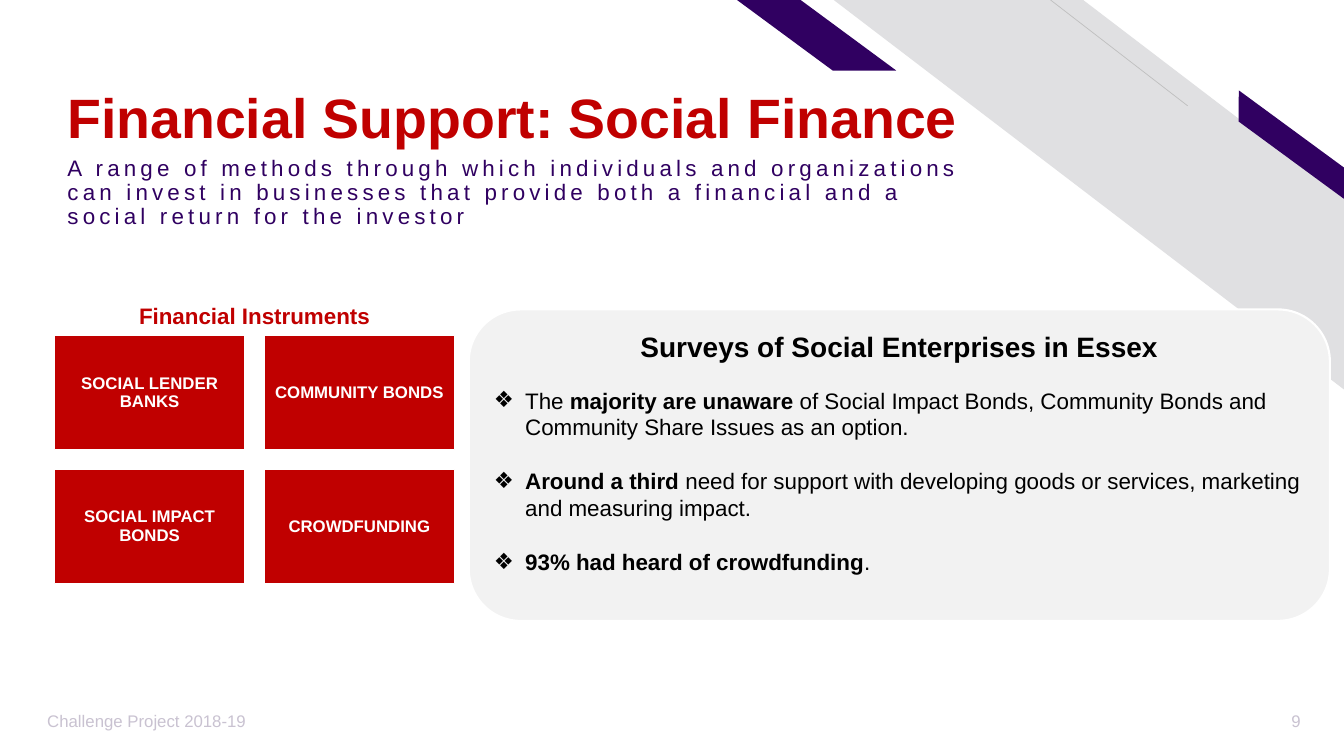
from lxml.etree import SubElement
from pptx import Presentation
from pptx.dml.color import RGBColor
from pptx.enum.shapes import MSO_CONNECTOR, MSO_SHAPE
from pptx.enum.text import MSO_ANCHOR, PP_ALIGN
from pptx.oxml.ns import qn
from pptx.util import Inches, Pt

WIDE, HIGH = Inches(13.33), Inches(7.5)
RED, PLUM, GREY, PALE = "C00000", "300061", "E0E0E2", "F2F2F2"
WHITE, BLACK, MUTED, RULE = "FFFFFF", "000000", "C9C2D1", "BFBFBF"
LEFT, MID, RIGHT = PP_ALIGN.LEFT, PP_ALIGN.CENTER, PP_ALIGN.RIGHT
TILES = ["SOCIAL LENDER BANKS", "COMMUNITY BONDS", "SOCIAL IMPACT BONDS", "CROWDFUNDING"]
POINTS = [
    [("The ", False), ("majority are unaware ", True),
     ("of Social Impact Bonds, Community Bonds and Community Share Issues as an option.", False)],
    [("Around a third ", True),
     ("need for support with developing goods or services, marketing and measuring impact.", False)],
    [("93% had heard of crowdfunding", True), (".", False)],
]


def color(code):
    """Turn a hex string into a colour."""
    return RGBColor.from_string(code)


def part(box, x, y, w, h):
    """Return the box at the given percentages of another box."""
    left, top, wide, high = box
    return left + wide * x / 100, top + high * y / 100, wide * w / 100, high * h / 100


def units(box):
    """Round a box to whole length units."""
    return [round(side) for side in box]


def block(slide, kind, box, fill, edge=None, width=1):
    """Draw a filled preset shape without shadow."""
    shape = slide.shapes.add_shape(kind, *units(box))
    shape.shadow.inherit = False
    shape.fill.solid()
    shape.fill.fore_color.rgb = color(fill)
    if edge:
        shape.line.color.rgb = color(edge)
        shape.line.width = Pt(width)
    else:
        shape.line.fill.background()
    return shape


def write(para, text, size, ink, bold=False, track=0):
    """Add one run to a paragraph."""
    run = para.add_run()
    run.text = text
    run.font.name = "Arial"
    run.font.size = Pt(size)
    run.font.bold = bold
    run.font.color.rgb = color(ink)
    if track:
        run.font._element.set("spc", str(track * 100))


def label(slide, box, text, size, ink, bold=False, align=LEFT,
          anchor=MSO_ANCHOR.TOP, lead=1.0, track=0):
    """Place a wrapped text box with one paragraph."""
    frame = slide.shapes.add_textbox(*units(box)).text_frame
    frame.word_wrap = True
    frame.vertical_anchor = anchor
    para = frame.paragraphs[0]
    para.alignment = align
    para.line_spacing = lead
    write(para, text, size, ink, bold, track)
    return frame


def decor(slide, box):
    """Draw the diagonal bands of the top right corner."""
    bands = [
        (MSO_SHAPE.DIAGONAL_STRIPE, (15.94, 0, 84.2, 100), 0.512, 0, GREY),
        (MSO_SHAPE.PARALLELOGRAM, (79.07, 33.85, 24.58, 6.46), 0.72, 36.3, PLUM),
        (MSO_SHAPE.PARALLELOGRAM, (0, 0, 26.24, 18.09), 1.356, 0, PLUM),
    ]
    for kind, share, skew, turn, fill in bands:
        band = block(slide, kind, part(box, *share), fill)
        band.adjustments[0] = skew
        band.rotation = turn
        band._element.spPr.find(qn("a:xfrm")).set("flipH", "1")
    x, y, w, h = units(part(box, 51.66, 0, 22.58, 27.13))
    line = slide.shapes.add_connector(MSO_CONNECTOR.STRAIGHT, x + w, y + h, x, y)
    line.line.color.rgb = color(RULE)
    line.line.width = Pt(0.5)
    SubElement(line._element.spPr, qn("a:effectLst"))


def header(slide, box):
    """Write the title and the line below it."""
    title = label(slide, part(box, 0, 0, 98.6, 57.8), "Financial Support: Social Finance",
                  39.6, RED, True, anchor=MSO_ANCHOR.BOTTOM, lead=0.9)
    title.margin_bottom = 0
    label(slide, part(box, 0, 58.7, 100, 41.3),
          "A range of methods through which individuals and organizations can invest in "
          "businesses that provide both a financial and a social return for the investor",
          16, PLUM, lead=0.9, track=3)


def tools(slide, box):
    """Draw the heading and the two by two grid of instruments."""
    label(slide, part(box, 15.4, 0, 69.2, 13), "Financial Instruments", 16, RED, True, MID)
    grid = part(box, 0, 13.4, 100, 86.6)
    for spot, text in enumerate(TILES):
        row, col = divmod(spot, 2)
        tile = block(slide, MSO_SHAPE.RECTANGLE,
                     part(grid, col * 52.4, row * 54, 47.6, 46), RED, WHITE)
        frame = tile.text_frame
        frame.word_wrap = True
        frame.vertical_anchor = MSO_ANCHOR.MIDDLE
        frame.margin_left = frame.margin_right = Inches(0.05)
        para = frame.paragraphs[0]
        para.alignment = MID
        para.line_spacing = 0.9
        write(para, text, 12, WHITE, True)


def bullet(para):
    """Give a paragraph a hanging diamond bullet."""
    props = para._p.get_or_add_pPr()
    props.set("marL", str(Inches(0.31)))
    props.set("indent", str(-Inches(0.31)))
    SubElement(props, qn("a:buFont")).set("typeface", "Arial")
    SubElement(props, qn("a:buChar")).set("char", "❖")


def survey(slide, box):
    """Draw the rounded card with the survey findings."""
    card = block(slide, MSO_SHAPE.ROUNDED_RECTANGLE, box, PALE, WHITE, 1.5)
    frame = card.text_frame
    frame.word_wrap = True
    frame.vertical_anchor = MSO_ANCHOR.TOP
    head = frame.paragraphs[0]
    head.alignment = MID
    head.space_after = Pt(16.8)
    write(head, "Surveys of Social Enterprises in Essex", 20, BLACK, True)
    for runs in POINTS:
        para = frame.add_paragraph()
        para.alignment = LEFT
        para.line_spacing = Pt(19.2)
        para.space_after = Pt(19.2)
        bullet(para)
        for text, bold in runs:
            write(para, text, 16, BLACK, bold)


def footer(slide, box):
    """Write the project name and the page number."""
    label(slide, part(box, 0, 0, 35.6, 100), "Challenge Project 2018-19",
          12, MUTED, anchor=MSO_ANCHOR.MIDDLE)
    label(slide, part(box, 93.6, 0, 6.4, 100), "9", 12, MUTED,
          align=RIGHT, anchor=MSO_ANCHOR.MIDDLE)


def main():
    """Build the slide and save it."""
    deck = Presentation()
    deck.slide_width, deck.slide_height = WIDE, HIGH
    slide = deck.slides.add_slide(deck.slide_layouts[6])
    page = (0, 0, WIDE, HIGH)
    decor(slide, part(page, 54.84, 0, 45.16, 51.6))
    header(slide, part(page, 4.28, 3.07, 69.32, 29.06))
    survey(slide, part(page, 34.88, 40.93, 64.07, 41.2))
    tools(slide, part(page, 4.05, 39.33, 29.78, 37.87))
    footer(slide, part(page, 2.78, 92.67, 94.74, 5.33))
    deck.save("out.pptx")


if __name__ == "__main__":
    main()
